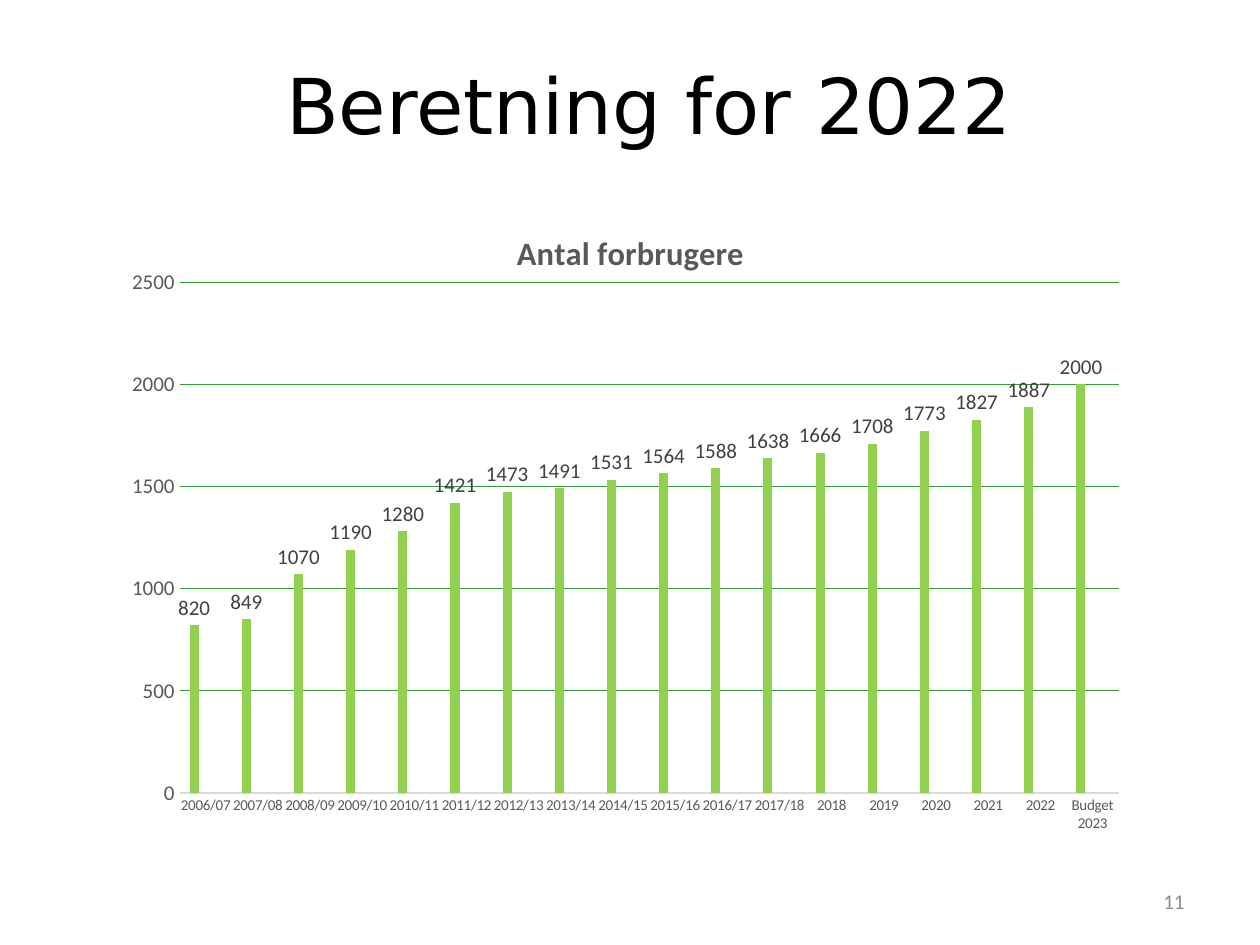
from lxml.etree import SubElement
from pptx import Presentation
from pptx.chart.data import CategoryChartData
from pptx.dml.color import RGBColor
from pptx.enum.chart import XL_CHART_TYPE as ChartType, XL_LABEL_POSITION as LabelPos
from pptx.enum.chart import XL_TICK_MARK as Tick
from pptx.enum.text import MSO_ANCHOR as Anchor, PP_ALIGN as Align
from pptx.oxml.ns import qn
from pptx.util import Inches, Pt

# Content
HEADING = "Beretning for 2022"
PAGE_NUMBER = "11"
CHART_TITLE = "Antal forbrugere"
CONSUMERS = {
    "2006/07": 820, "2007/08": 849, "2008/09": 1070, "2009/10": 1190,
    "2010/11": 1280, "2011/12": 1421, "2012/13": 1473, "2013/14": 1491,
    "2014/15": 1531, "2015/16": 1564, "2016/17": 1588, "2017/18": 1638,
    "2018": 1666, "2019": 1708, "2020": 1773, "2021": 1827, "2022": 1887,
    "Budget 2023": 2000,
}
EMPTY = [None] * len(CONSUMERS)
SERIES = [  # name, values, colour key
    ("Series 1", list(CONSUMERS.values()), "bar"),
    ("Series 2", EMPTY, "second"),
    ("Series 3", EMPTY, "third"),
]
COLORS = {
    "heading": "000000", "page": "8C8C8C", "axis": "595959", "label": "404040",
    "base": "D9D9D9", "grid": "339933",
    "bar": "92D050", "second": "9BBB59", "third": "8064A2",
}

# Places as shares of the slide: left, top, width, height
WIDTH, HEIGHT = Inches(10), Inches(7.5)
HEADING_BOX = (0.106, 0.048, 0.819, 0.124)
PAGE_BOX = (0.717, 0.927, 0.233, 0.053)
CHART_BOX = (0.091, 0.217, 0.819, 0.664)
PLOT_BOX = {"x": 0.063, "y": 0.123, "w": 0.91, "h": 0.814}  # shares of the chart


def color(key):
    return RGBColor.from_string(COLORS[key])


def place(box):
    return [round(share * side) for share, side in zip(box, (WIDTH, HEIGHT) * 2)]


def style(font, size, key, name="Calibri", bold=False):
    font.size, font.name, font.bold = Pt(size), name, bold
    font.color.rgb = color(key)


def add_text(slide, box, text, align, **look):
    frame = slide.shapes.add_textbox(*place(box)).text_frame
    frame.word_wrap = True
    frame.vertical_anchor = Anchor.MIDDLE
    paragraph = frame.paragraphs[0]
    paragraph.alignment = align
    run = paragraph.add_run()
    run.text = text
    style(run.font, **look)


def fix_plot_area(chart):
    plot_area = chart._chartSpace.chart.plotArea
    for old in plot_area.findall(qn("c:layout")):
        plot_area.remove(old)
    layout = SubElement(plot_area, qn("c:layout"))
    plot_area.insert(0, layout)
    manual = SubElement(layout, qn("c:manualLayout"))
    settings = {"layoutTarget": "inner", "xMode": "edge", "yMode": "edge", **PLOT_BOX}
    for tag, value in settings.items():
        SubElement(manual, qn(f"c:{tag}")).set("val", str(value))


prs = Presentation()
prs.slide_width, prs.slide_height = WIDTH, HEIGHT
slide = prs.slides.add_slide(prs.slide_layouts[6])

# Heading and page number
add_text(slide, HEADING_BOX, HEADING, Align.CENTER,
         size=44, key="heading", name="DejaVu Sans")
add_text(slide, PAGE_BOX, PAGE_NUMBER, Align.RIGHT, size=12, key="page")

# Chart data
data = CategoryChartData()
data.categories = list(CONSUMERS)
for name, values, _ in SERIES:
    data.add_series(name, values)
chart = slide.shapes.add_chart(ChartType.COLUMN_CLUSTERED, *place(CHART_BOX), data).chart
style(chart.font, 10, "heading")
chart.has_legend = False
fix_plot_area(chart)

# Chart title
chart.has_title = True
title_run = chart.chart_title.text_frame.paragraphs[0].add_run()
title_run.text = CHART_TITLE
style(title_run.font, 18.6, "axis", bold=True)
chart.chart_title.include_in_layout = False

# Columns and their labels
columns = chart.plots[0]
columns.gap_width, columns.overlap = 219, -27
columns.vary_by_categories = False
for series, (_, _, key) in zip(columns.series, SERIES):
    series.format.fill.solid()
    series.format.fill.fore_color.rgb = color(key)
    series.invert_if_negative = False
    labels = series.data_labels
    labels.show_value = True
    labels.position = LabelPos.OUTSIDE_END
    style(labels.font, 12, "label")

# Axes
years, counts = chart.category_axis, chart.value_axis
for axis, size in ((years, 8.6), (counts, 12)):
    axis.major_tick_mark = axis.minor_tick_mark = Tick.NONE
    style(axis.tick_labels.font, size, "axis")
years._element.find(qn("c:txPr")).find(qn("a:bodyPr")).set("rot", "0")
counts.minimum_scale, counts.maximum_scale, counts.major_unit = 0, 2500, 500
counts.has_major_gridlines = True
counts.format.line.fill.background()
for line, key in ((years.format.line, "base"),
                  (counts.major_gridlines.format.line, "grid")):
    line.width = Pt(0.75)
    line.color.rgb = color(key)

prs.save("out.pptx")
